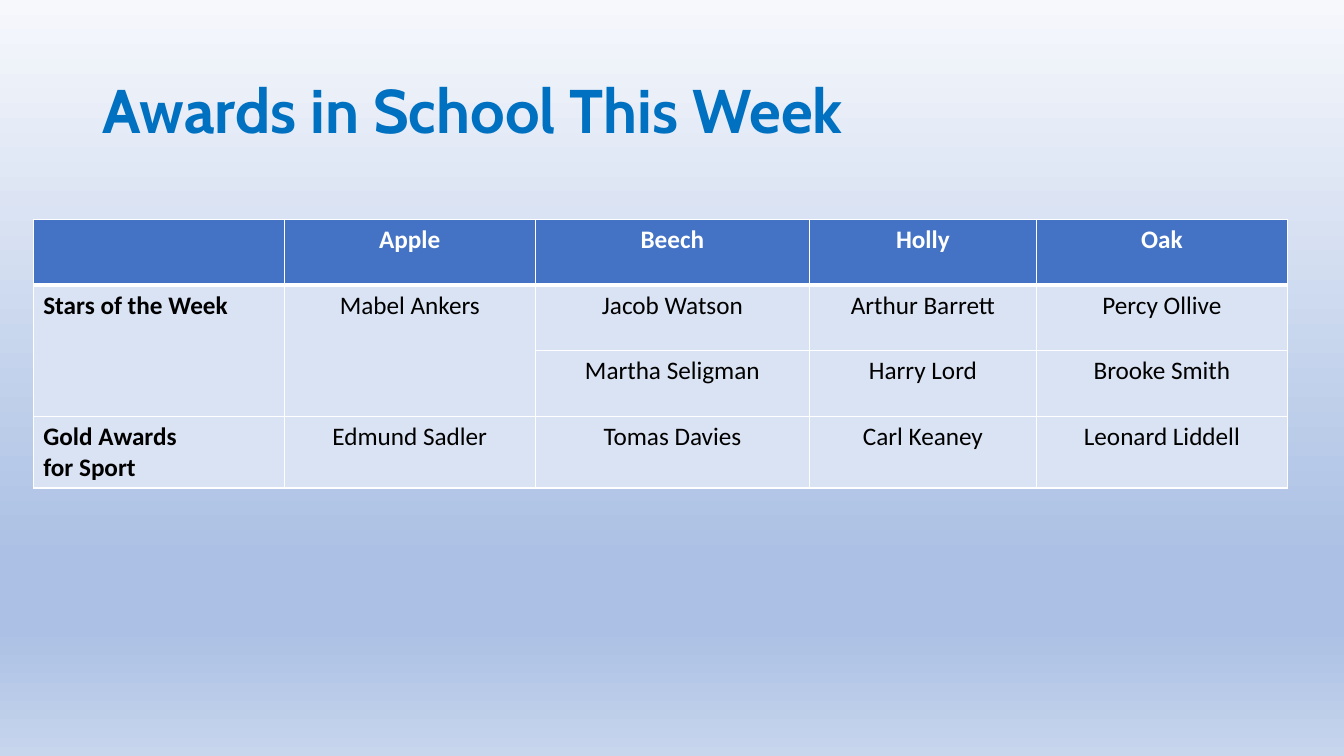
from lxml import etree
from pptx import Presentation
from pptx.dml.color import RGBColor
from pptx.enum.text import MSO_ANCHOR, PP_ALIGN
from pptx.oxml.ns import qn
from pptx.util import Inches, Pt

LEFT, CENTER = PP_ALIGN.LEFT, PP_ALIGN.CENTER
MIDDLE = MSO_ANCHOR.MIDDLE
TITLE_ONLY = 5

BACKGROUND_STOPS = [(0, "F6F8FC"), (74, "ABC0E4"), (83, "ABC0E4"), (100, "C7D5ED")]
TITLE_BLUE, HEADER_BLUE, BODY_BLUE = "0070C0", "4472C4", "DAE3F3"
WHITE, BLACK = "FFFFFF", "000000"

COLUMN_WIDTHS = [2.49, 2.49, 2.72, 2.25, 2.49]
ROW_HEIGHT = 0.65
AWARDS = [
    ["", "Apple", "Beech", "Holly", "Oak"],
    ["Stars of the Week", "Mabel Ankers", "Jacob Watson", "Arthur Barrett", "Percy Ollive"],
    ["", "", "Martha Seligman", "Harry Lord", "Brooke Smith"],
    ["Gold Awards\nfor Sport", "Edmund Sadler", "Tomas Davies", "Carl Keaney", "Leonard Liddell"],
]


def color(value):
    """Turn a hex string into a colour."""
    return RGBColor.from_string(value)


def add_run(paragraph, text, font_name, size, font_color, bold):
    """Add one formatted run to a paragraph."""
    run = paragraph.add_run()
    run.text = text
    run.font.name = font_name
    run.font.size = Pt(size)
    run.font.bold = bold
    run.font.color.rgb = color(font_color)


def set_background(slide):
    """Fill the slide background with a vertical gradient."""
    fill = slide.background.fill
    fill.gradient()
    fill.gradient_angle = 270
    stops = next(slide.element.iter(qn("a:gsLst")))
    for stop in list(stops):
        stops.remove(stop)
    for percent, value in BACKGROUND_STOPS:
        stop = etree.SubElement(stops, qn("a:gs"), pos=str(percent * 1000))
        etree.SubElement(stop, qn("a:srgbClr"), val=value)


def set_title(slide, text):
    """Place and format the slide title."""
    title = slide.shapes.title
    title.left, title.top = Inches(0.92), Inches(0.4)
    title.width, title.height = Inches(11.5), Inches(1.45)
    title.text_frame.vertical_anchor = MIDDLE
    title.text_frame.word_wrap = True
    paragraph = title.text_frame.paragraphs[0]
    paragraph.alignment = LEFT
    paragraph.line_spacing = 0.9
    add_run(paragraph, text, "Cabin", 44, TITLE_BLUE, True)


def set_borders(cell, top, bottom):
    """Draw white cell borders, with the top and bottom widths in points."""
    properties = cell._tc.get_or_add_tcPr()
    widths = [("L", 1), ("R", 1), ("T", top), ("B", bottom)]
    for index, (side, width) in enumerate(widths):
        line = etree.Element(qn(f"a:ln{side}"), w=str(Pt(width)))
        fill = etree.SubElement(line, qn("a:solidFill"))
        etree.SubElement(fill, qn("a:srgbClr"), val=WHITE)
        properties.insert(index, line)


def fill_cell(cell, text, row, column):
    """Format one table cell and write its text."""
    header = row == 0
    cell.fill.solid()
    cell.fill.fore_color.rgb = color(HEADER_BLUE if header else BODY_BLUE)
    set_borders(cell, 3 if row == 1 else 1, 3 if header else 1)
    if not text:
        return
    frame = cell.text_frame
    for index, line in enumerate(text.split("\n")):
        paragraph = frame.add_paragraph() if index else frame.paragraphs[0]
        paragraph.alignment = CENTER if column else LEFT
        add_run(paragraph, line, "Calibri", 18, WHITE if header else BLACK,
                header or column == 0)


def add_awards_table(slide):
    """Add the table of awards by class."""
    table = slide.shapes.add_table(
        len(AWARDS), len(COLUMN_WIDTHS), Inches(0.33), Inches(2.18),
        Inches(sum(COLUMN_WIDTHS)), Inches(ROW_HEIGHT * len(AWARDS))).table
    for column, width in zip(table.columns, COLUMN_WIDTHS):
        column.width = Inches(width)
    for row, texts in enumerate(AWARDS):
        table.rows[row].height = Inches(ROW_HEIGHT)
        for column, text in enumerate(texts):
            fill_cell(table.cell(row, column), text, row, column)
    for column in (0, 1):
        table.cell(1, column).merge(table.cell(2, column))


def main():
    """Build and save the awards slide."""
    presentation = Presentation()
    presentation.slide_width = Inches(13.33)
    presentation.slide_height = Inches(7.5)
    slide = presentation.slides.add_slide(presentation.slide_layouts[TITLE_ONLY])
    set_background(slide)
    set_title(slide, "Awards in School This Week")
    add_awards_table(slide)
    presentation.save("out.pptx")


if __name__ == "__main__":
    main()
